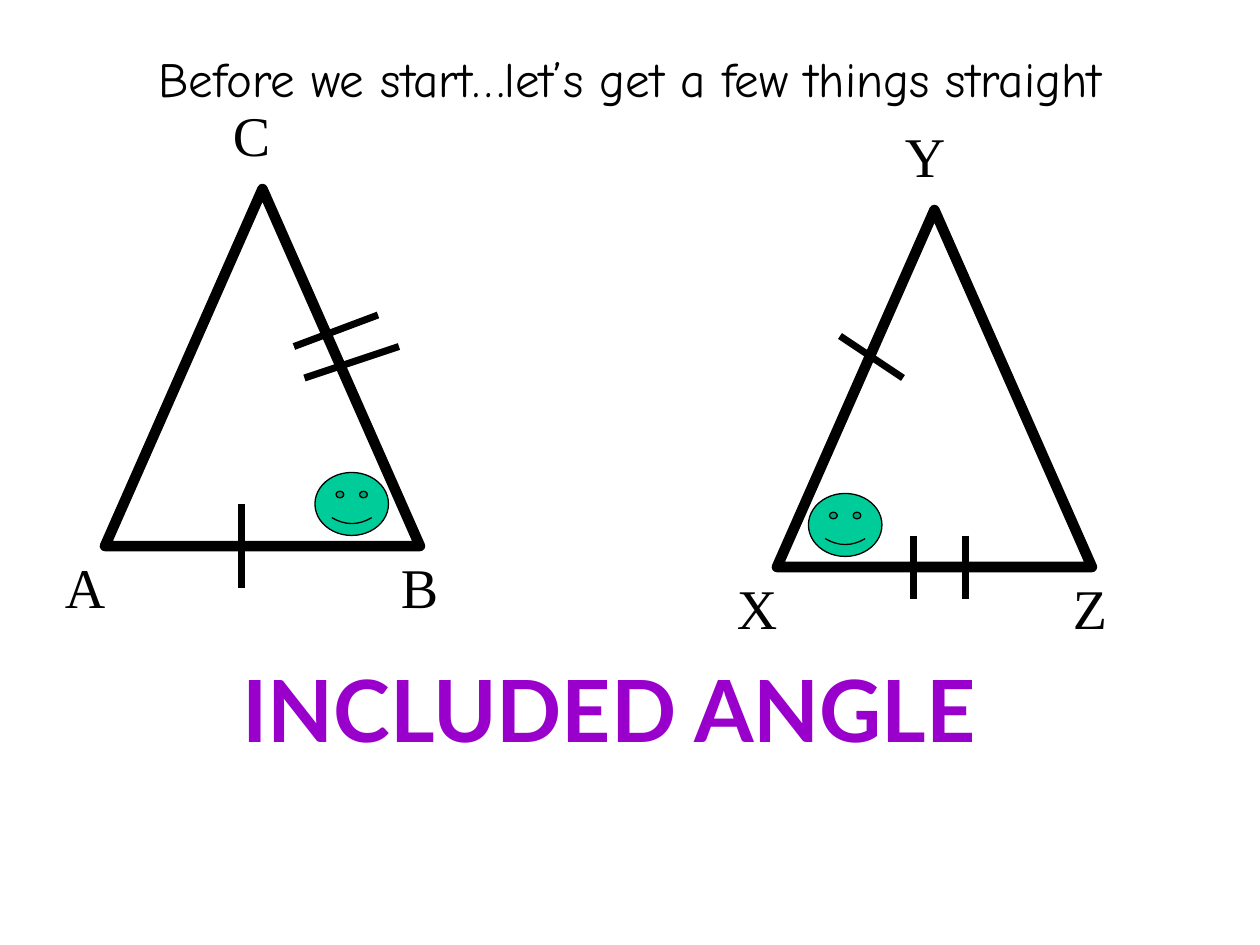
from lxml.etree import SubElement
from pptx import Presentation
from pptx.dml.color import RGBColor
from pptx.enum.shapes import MSO_CONNECTOR as Connector, MSO_SHAPE as Shape
from pptx.enum.text import MSO_ANCHOR as Anchor, PP_ALIGN as Align
from pptx.oxml.ns import qn
from pptx.util import Inches, Pt

COLUMNS, ROWS = 120, 90
WIDTH, HEIGHT = Inches(10), Inches(7.5)
BLACK, GREEN, PURPLE = "000000", "00CC99", "9900CC"
TRIANGLE = (30, 34)
CORNERS = [(-5, 34), (27, 34), (11, -9)]


def color(value):
    return RGBColor.from_string(value)


def grid(column, row):
    return round(WIDTH * column / COLUMNS), round(HEIGHT * row / ROWS)


def write(box, text, font, size, ink=BLACK, bold=False, align=Align.LEFT):
    frame = box.text_frame
    frame.word_wrap = True
    frame.vertical_anchor = Anchor.TOP
    para = frame.paragraphs[0]
    para.text = text
    para.alignment = align
    para.font.name = font
    para.font.size = Pt(size)
    para.font.bold = bold
    para.font.color.rgb = color(ink)


def add_figure(shapes, kind, at, size, weight, fill=None):
    figure = shapes.add_shape(kind, *grid(*at), *grid(*size))
    figure.shadow.inherit = False
    if fill:
        figure.fill.solid()
        figure.fill.fore_color.rgb = color(fill)
    else:
        figure.fill.background()
    figure.line.color.rgb = color(BLACK)
    figure.line.width = Pt(weight)


def add_tick(shapes, start, end):
    tick = shapes.add_connector(Connector.STRAIGHT, *grid(*start), *grid(*end))
    tick.line.color.rgb = color(BLACK)
    tick.line.width = Pt(4)
    SubElement(tick._element.spPr, qn("a:effectLst"))


def add_triangle(page, origin, letters, ticks, smiley):
    def place(point):
        return origin[0] + point[0], origin[1] + point[1]

    shapes = page.shapes.add_group_shape().shapes
    add_figure(shapes, Shape.ISOSCELES_TRIANGLE, origin, TRIANGLE, 6)
    for letter, corner in zip(letters, CORNERS):
        label = shapes.add_textbox(*grid(*place(corner)), *grid(13, 7.6))
        write(label, letter, "Times New Roman", 32)
    for start, end in ticks:
        add_tick(shapes, place(start), place(end))
    add_figure(page.shapes, Shape.SMILEY_FACE, place(smiley), (7, 6), 0.75, GREEN)


def add_title(page, text):
    title = page.shapes.title
    title.left, title.top = grid(0, 4)
    title.width, title.height = grid(COLUMNS, 6.8)
    write(title, text, "Comic Neue", 28, align=Align.CENTER)


def main():
    deck = Presentation()
    deck.slide_width, deck.slide_height = WIDTH, HEIGHT
    page = deck.slides.add_slide(deck.slide_layouts[5])
    add_title(page, "Before we start…let’s get a few things straight")
    add_triangle(
        page, (10, 18), "ABC",
        [((13, 30), (13, 38)), ((18, 15), (26, 12)), ((19, 18), (28, 15))],
        (20, 27),
    )
    add_triangle(
        page, (74, 20), "XZY",
        [((6, 12), (12, 16)), ((13, 31), (13, 37)), ((18, 31), (18, 37))],
        (3, 27),
    )
    term = page.shapes.add_textbox(*grid(14, 62), *grid(88, 11))
    write(term, "INCLUDED ANGLE", "Lato", 49, PURPLE, True, Align.CENTER)
    deck.save("out.pptx")


if __name__ == "__main__":
    main()
